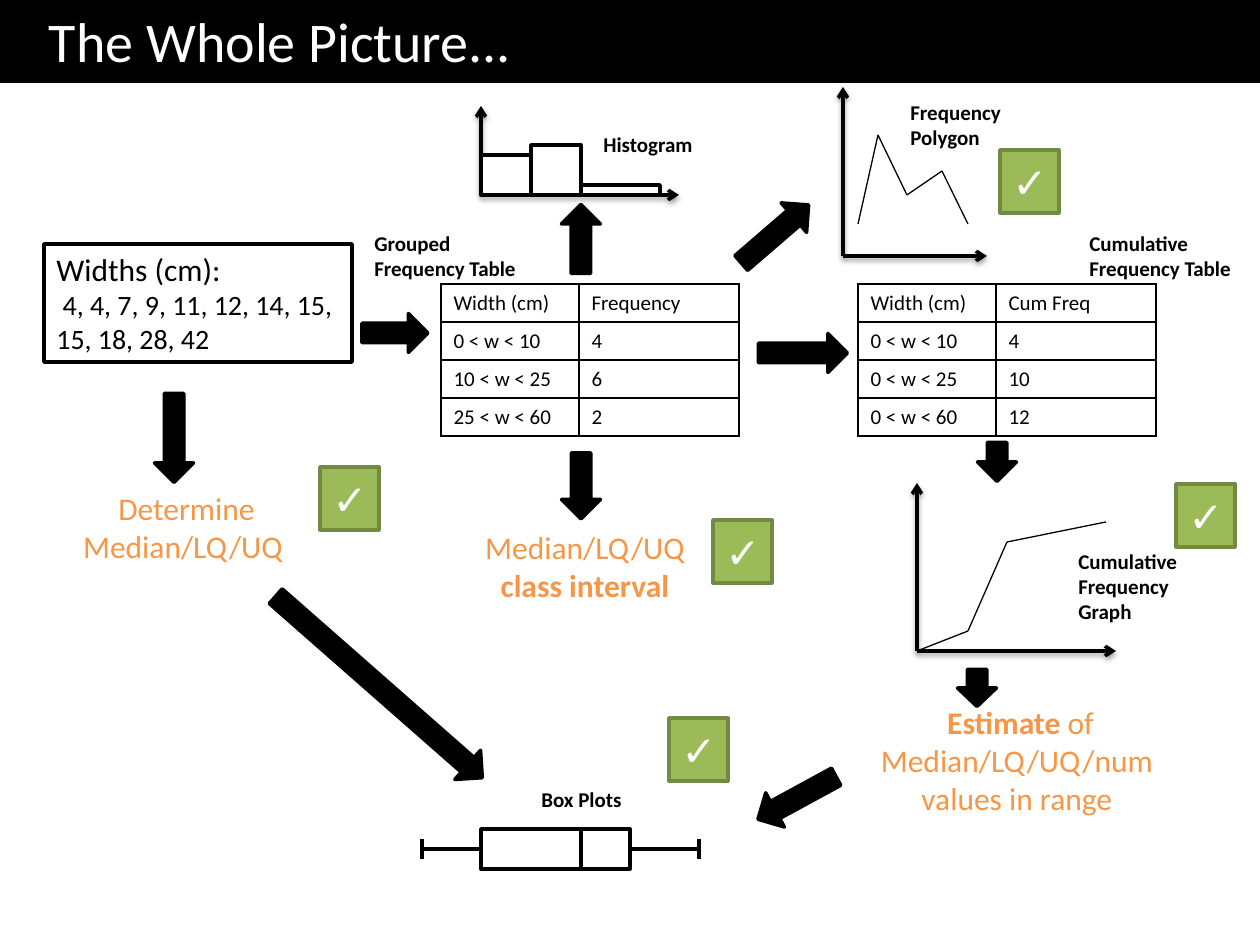
from dataclasses import dataclass
from itertools import pairwise

from lxml.etree import SubElement
from pptx import Presentation
from pptx.dml.color import RGBColor
from pptx.enum.shapes import MSO_CONNECTOR, MSO_SHAPE
from pptx.enum.text import MSO_ANCHOR, PP_ALIGN
from pptx.oxml import parse_xml
from pptx.oxml.ns import nsdecls, qn
from pptx.util import Pt


@dataclass(frozen=True)
class Theme:
    font: str = "Calibri"
    black: str = "000000"
    white: str = "FFFFFF"
    orange: str = "F79646"
    green: str = "9BBB59"
    moss: str = "738A42"
    title: int = 32
    tick: int = 24
    large: int = 18
    medium: int = 16
    small: int = 12
    thick: float = 2
    thin: float = 0.75


THEME = Theme()
SCALE = 914400 / 126
ARROW = 39
LEFT, CENTER = PP_ALIGN.LEFT, PP_ALIGN.CENTER


def px(*vals):
    return [round(v * SCALE) for v in vals]


def rgb(code):
    return RGBColor.from_string(code)


def add_run(para, text, size, color=THEME.black, bold=False):
    run = para.add_run()
    run.text = text
    font = run.font
    font.name, font.size, font.bold = THEME.font, Pt(size), bold
    font.color.rgb = rgb(color)


def add_box(slide, box, fill=THEME.white, edge=THEME.black, kind=MSO_SHAPE.RECTANGLE):
    shape = slide.shapes.add_shape(kind, *px(*box))
    shape.shadow.inherit = False
    shape.fill.solid()
    shape.fill.fore_color.rgb = rgb(fill)
    shape.line.color.rgb = rgb(edge)
    shape.line.width = Pt(THEME.thick)
    shape.text_frame.paragraphs[0].alignment = LEFT
    return shape


def add_arrow(slide, mid_x, mid_y, length, angle):
    box = (mid_x - length / 2, mid_y - ARROW / 2, length, ARROW)
    shape = add_box(slide, box, THEME.black, kind=MSO_SHAPE.RIGHT_ARROW)
    shape.rotation = angle


def add_line(slide, start, end, width=THEME.thick):
    line = slide.shapes.add_connector(MSO_CONNECTOR.STRAIGHT, *px(*start, *end))
    line.line.color.rgb = rgb(THEME.black)
    line.line.width = Pt(width)
    SubElement(line._element.spPr, qn("a:effectLst"))
    return line


def add_axes(slide, x, y, top, right):
    """Draw two arrows with soft shadows from the origin (x, y)."""
    for end in ((x, top), (right, y)):
        props = add_line(slide, (x, y), end)._element.spPr
        SubElement(props.find(qn("a:ln")), qn("a:tailEnd"), type="arrow")
        props.find(qn("a:effectLst")).append(parse_xml(
            f'<a:outerShdw {nsdecls("a")} blurRad="{Pt(3.1)}" dist="{Pt(1.6)}" '
            f'dir="5400000" rotWithShape="0"><a:srgbClr val="{THEME.black}">'
            '<a:alpha val="38000"/></a:srgbClr></a:outerShdw>'))


def add_curve(slide, points):
    for start, end in pairwise(points):
        add_line(slide, start, end, THEME.thin)


def add_text(slide, box, runs, size, color, align):
    """Add one wrapped paragraph; runs holds (text, bold) pairs."""
    frame = slide.shapes.add_textbox(*px(*box)).text_frame
    frame.word_wrap = True
    para = frame.paragraphs[0]
    para.alignment = align
    for text, bold in runs:
        add_run(para, text, size, color, bold)


def add_label(slide, box, text, align=LEFT):
    add_text(slide, box, [(text, True)], THEME.small, THEME.black, align)


def add_goal(slide, box, *runs):
    add_text(slide, box, runs, THEME.large, THEME.orange, CENTER)


def add_tick(slide, x, y):
    shape = add_box(slide, (x, y, 59, 63), THEME.green, THEME.moss)
    add_run(shape.text_frame.paragraphs[0], "✓", THEME.tick, THEME.white)


def add_border(cell):
    props = cell._tc.get_or_add_tcPr()
    for spot, side in enumerate(("lnL", "lnR", "lnT", "lnB")):
        props.insert(spot, parse_xml(
            f'<a:{side} {nsdecls("a")} w="{Pt(1)}"><a:solidFill>'
            f'<a:srgbClr val="{THEME.black}"/></a:solidFill></a:{side}>'))


def add_grid(slide, x, y, rows):
    widths, height = (138, 160), 38
    frame = slide.shapes.add_table(
        len(rows), len(widths), *px(x, y, sum(widths), height * len(rows)))
    table = frame.table
    table.first_row = table.horz_banding = False
    for col, width in zip(table.columns, px(*widths)):
        col.width = width
    for row, texts in zip(table.rows, rows):
        row.height = px(height)[0]
        for cell, text in zip(row.cells, texts):
            cell.fill.background()
            add_border(cell)
            add_run(cell.text_frame.paragraphs[0], text, THEME.small)


def add_title(slide):
    frame = add_box(slide, (0, 0, 1260, 81), THEME.black).text_frame
    frame.margin_left = px(49)[0]
    add_run(frame.paragraphs[0], "The Whole Picture...", THEME.title, THEME.white)


def add_data(slide):
    frame = add_box(slide, (44, 244, 308, 118)).text_frame
    frame.vertical_anchor = MSO_ANCHOR.TOP
    add_run(frame.paragraphs[0], "Widths (cm):", THEME.large)
    para = frame.add_paragraph()
    para.alignment = LEFT
    add_run(para, " 4, 4, 7, 9, 11, 12, 14, 15, 15, 18, 28, 42", THEME.medium)


def add_plot(slide):
    """Draw the box plot: two boxes, each with a capped whisker."""
    y = 849
    for x, width, side, tip in ((481, 100, 1, 422), (581, 49, 3, 699)):
        box = add_box(slide, (x, y - 20, width, 40))
        whisker = add_line(slide, (x, y), (tip, y))
        whisker.begin_connect(box, side)
        add_line(slide, (tip, y + 10), (tip, y - 10))
    add_label(slide, (512, 780, 139, 38), "Box Plots", CENTER)


def add_bars(slide):
    x, base = 481, 195
    add_axes(slide, x, base, 106, 679)
    for width, height in ((50, 40), (50, 50), (79, 10)):
        add_box(slide, (x, base - height, width, height))
        x += width
    add_label(slide, (591, 125, 139, 38), "Histogram")


def main():
    deck = Presentation()
    deck.slide_width, deck.slide_height = px(1260, 945)
    slide = deck.slides.add_slide(deck.slide_layouts[6])

    add_title(slide)
    for arrow in ((581, 239, 69, 270), (581, 486, 66, 90), (997, 462, 39, 90),
                  (803, 353, 89, 0), (977, 688, 37, 90), (797, 798, 89, 151.4),
                  (174, 438, 89, 90), (379, 687, 275, 41.3), (395, 333, 66, 0),
                  (775, 234, 89, 319.2)):
        add_arrow(slide, *arrow)

    add_goal(slide, (471, 522, 228, 89), ("Median/LQ/UQ ", False), ("class interval", True))
    add_goal(slide, (858, 697, 318, 127), (" ", False), ("Estimate", True),
             (" of Median/LQ/UQ/num values in range", False))
    add_goal(slide, (64, 483, 238, 89), (" Determine Median/LQ/UQ", False))

    add_grid(slide, 441, 284, [("Width (cm)", "Frequency"), ("0 < w < 10", "4"),
                               ("10 < w < 25", "6"), ("25 < w < 60", "2")])
    add_grid(slide, 858, 284, [("Width (cm)", "Cum Freq"), ("0 < w < 10", "4"),
                               ("0 < w < 25", "10"), ("0 < w < 60", "12")])
    add_label(slide, (362, 224, 189, 63), "Grouped Frequency Table")
    add_label(slide, (1077, 224, 179, 63), "Cumulative Frequency Table")
    add_data(slide)

    add_axes(slide, 917, 651, 483, 1116)
    add_curve(slide, [(917, 651), (968, 631), (1007, 542), (1106, 522)])
    add_label(slide, (1066, 542, 139, 89), "Cumulative Frequency Graph")
    add_plot(slide)
    add_bars(slide)
    add_axes(slide, 843, 256, 87, 987)
    add_curve(slide, [(858, 224), (878, 135), (907, 195), (942, 171), (968, 224)])
    add_label(slide, (898, 93, 179, 63), "Frequency Polygon")

    for spot in ((1000, 150), (713, 520), (1176, 484), (669, 718), (320, 467)):
        add_tick(slide, *spot)
    deck.save("out.pptx")


if __name__ == "__main__":
    main()
